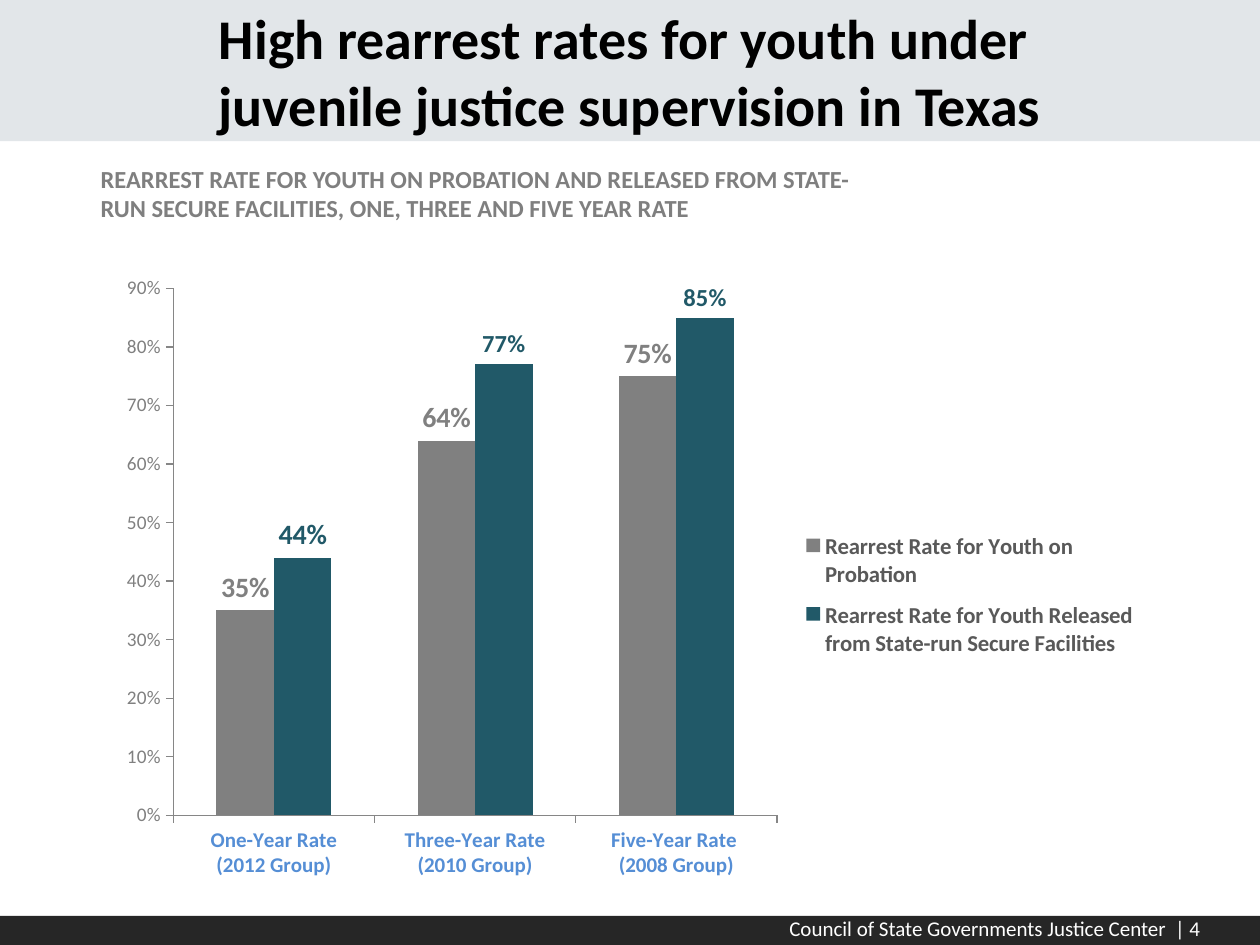
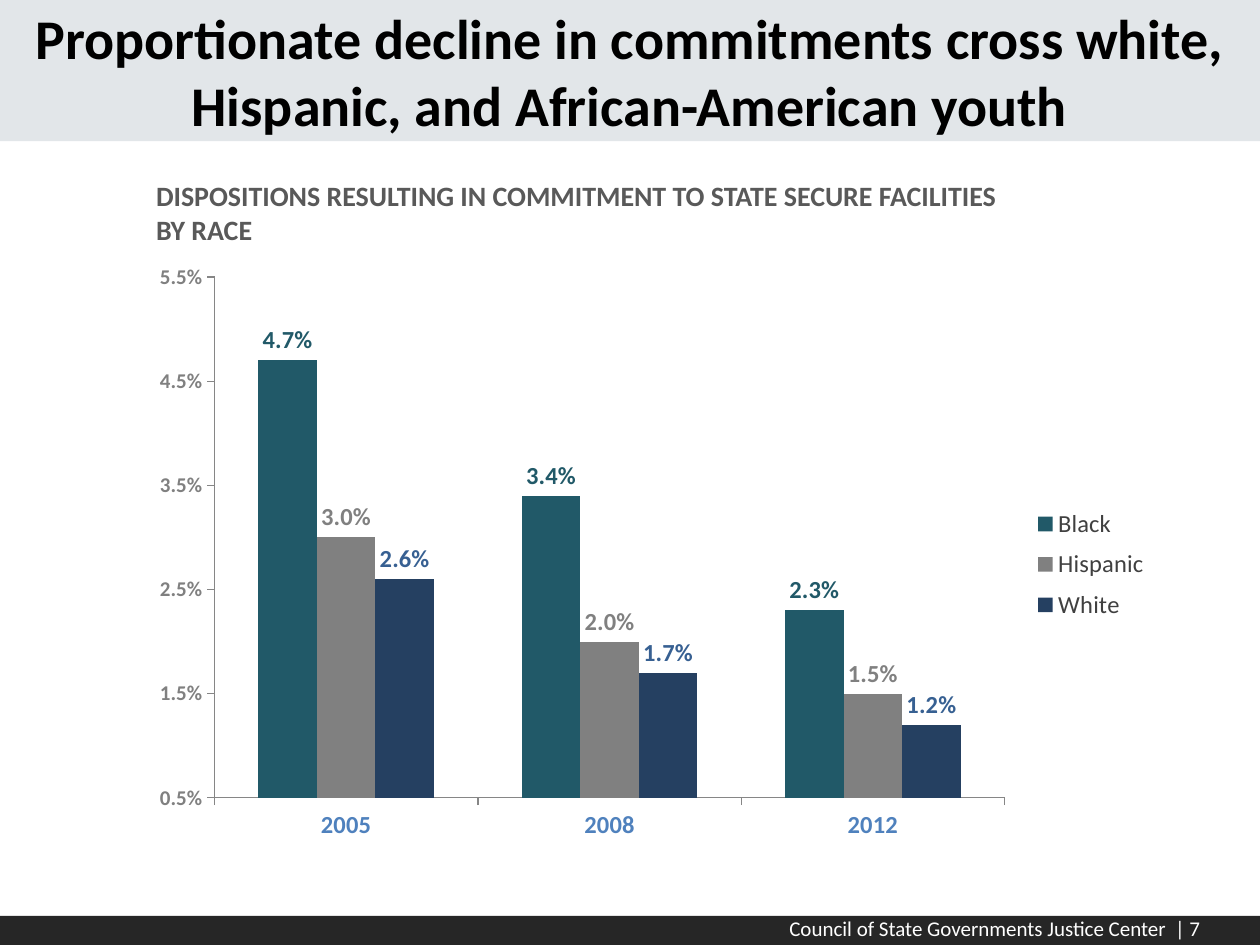
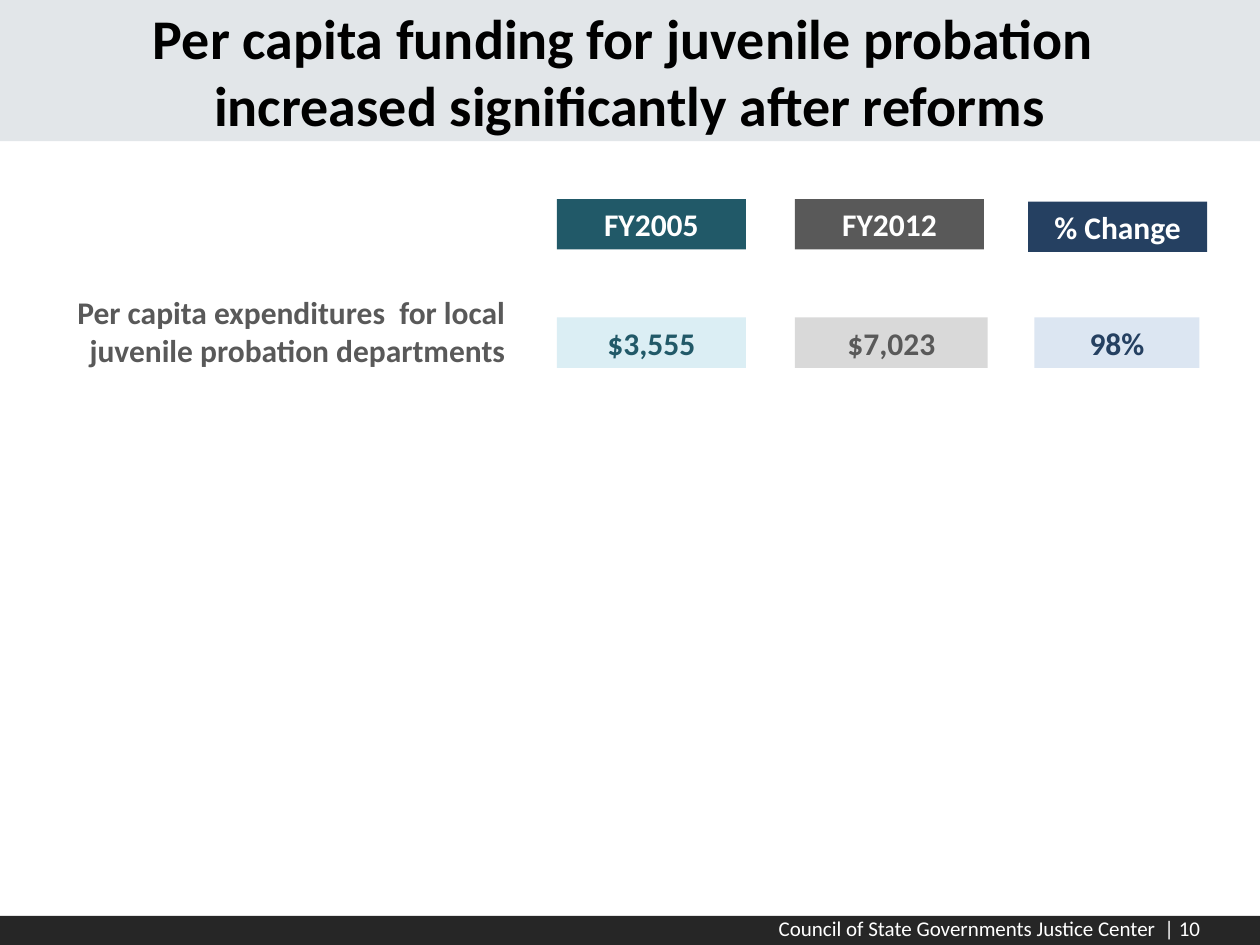
from lxml import etree
from pptx import Presentation
from pptx import util as u
from pptx.chart.data import CategoryChartData
from pptx.dml.color import RGBColor
from pptx.enum import chart as charts, shapes, text
from pptx.oxml.ns import qn

WIDTH, HEIGHT = u.Inches(10), u.Inches(7.5)
COLUMN, ROW = WIDTH / 10, HEIGHT / 7.5
FONT = "Calibri"
COLORS = {
    "black": "000000", "white": "FFFFFF", "band": "E2E6E9", "footer": "262626",
    "teal": "215968", "gray": "808080", "navy": "254061",
    "dark gray": "595959", "caption": "7F7F7F", "legend": "404040",
    "pale teal": "DBEEF4", "pale gray": "D9D9D9", "pale navy": "DCE6F2",
    "bright blue": "558ED5", "steel blue": "4F81BD", "label blue": "376092",
    "axis": "868686",
}
ALIGN = text.PP_ALIGN


def color(name):
    return RGBColor.from_string(COLORS[name])


def grid(left, top, columns, rows):
    return [round(n) for n in (left * COLUMN, top * ROW, columns * COLUMN, rows * ROW)]


def style(font, size, ink, bold=False):
    font.name = FONT
    font.size = u.Pt(size)
    font.bold = bold
    font.color.rgb = color(ink)


def write(box, words, size=18, ink="white", bold=True, align=ALIGN.CENTER,
          anchor=text.MSO_ANCHOR.MIDDLE):
    """Fill a box with text, one paragraph per line."""
    frame = box.text_frame
    frame.word_wrap = True
    frame.auto_size = text.MSO_AUTO_SIZE.NONE
    frame.vertical_anchor = anchor
    frame.text = words
    for para in frame.paragraphs:
        para.alignment = align
        for span in para.runs:
            style(span.font, size, ink, bold)


def add_text(page, area, words, **format):
    write(page.shapes.add_textbox(*grid(*area)), words, **format)


def add_box(page, area, fill, words="", **format):
    box = page.shapes.add_shape(shapes.MSO_SHAPE.RECTANGLE, *grid(*area))
    box.shadow.inherit = False
    box.fill.solid()
    box.fill.fore_color.rgb = color(fill)
    box.line.fill.background()
    if words:
        write(box, words, **format)


def add_page(deck, title, number):
    """Add a page with its title band and footer."""
    page = deck.slides.add_slide(deck.slide_layouts[5])
    band = page.shapes.title
    band.left, band.top, band.width, band.height = grid(0, 0, 10, 1.12)
    band.fill.solid()
    band.fill.fore_color.rgb = color("band")
    write(band, title, size=32, ink="black")
    add_box(page, (0, 7.27, 10, 0.23), "footer")
    add_text(page, (5.3, 7.24, 4.33, 0.26),
             f"Council of State Governments Justice Center  | {number}",
             size=12, bold=False, align=ALIGN.RIGHT)
    return page


def add_caption(page, area, words, size, ink):
    add_text(page, area, words, size=size, ink=ink, align=ALIGN.LEFT,
             anchor=text.MSO_ANCHOR.TOP)


def set_layout(part, index, shares, inner=False):
    """Place a chart part by its x, y, width and height shares of the chart."""
    for old in part.findall(qn("c:layout")):
        part.remove(old)
    layout = etree.Element(qn("c:layout"))
    manual = etree.SubElement(layout, qn("c:manualLayout"))
    settings = [("layoutTarget", "inner")] if inner else []
    settings += [("xMode", "edge"), ("yMode", "edge"), *zip("xywh", shares)]
    for tag, value in settings:
        etree.SubElement(manual, qn(f"c:{tag}")).set("val", str(value))
    part.insert(index, layout)


def style_axis(axis, size, ink, bold):
    axis.has_major_gridlines = False
    axis.major_tick_mark = charts.XL_TICK_MARK.OUTSIDE
    axis.minor_tick_mark = charts.XL_TICK_MARK.NONE
    axis.format.line.color.rgb = color("axis")
    style(axis.tick_labels.font, size, ink, bold)


def add_columns(page, area, categories, series, number_format, scale,
                category_font, value_font, legend_font, plot_area, legend_area):
    """Add a column chart; series holds (name, values, fill, label size, label ink)."""
    data = CategoryChartData(number_format=number_format)
    data.categories = categories
    for name, values, *_ in series:
        data.add_series(name, values)
    chart = page.shapes.add_chart(charts.XL_CHART_TYPE.COLUMN_CLUSTERED,
                                  *grid(*area), data).chart
    chart.has_title = False
    style(chart.font, 12, "black")

    axis = chart.value_axis
    axis.minimum_scale, axis.maximum_scale, axis.major_unit = scale
    axis.tick_labels.number_format = number_format
    axis.tick_labels.number_format_is_linked = False
    style_axis(axis, *value_font)
    style_axis(chart.category_axis, *category_font)

    plot = chart.plots[0]
    plot.gap_width, plot.overlap = 150, 0
    plot.vary_by_categories = False
    for bars, (_, _, fill, size, ink) in zip(plot.series, series):
        bars.format.fill.solid()
        bars.format.fill.fore_color.rgb = color(fill)
        labels = bars.data_labels
        labels.show_value = True
        labels.number_format = number_format
        labels.number_format_is_linked = False
        labels.position = charts.XL_LABEL_POSITION.OUTSIDE_END
        style(labels.font, size, ink, True)

    chart.has_legend = True
    chart.legend.position = charts.XL_LEGEND_POSITION.RIGHT
    chart.legend.include_in_layout = False
    style(chart.legend.font, *legend_font)
    set_layout(chart.element.xpath("//c:plotArea")[0], 0, plot_area, inner=True)
    set_layout(chart.element.xpath("//c:legend")[0], 1, legend_area)
    return chart


def add_rearrest_page(deck):
    page = add_page(deck, "High rearrest rates for youth under \n"
                    "juvenile justice supervision in Texas", 4)
    chart = add_columns(
        page, (0.88, 2.09, 8.26, 4.98),
        ["One-Year Rate\n(2012 Group)", "Three-Year Rate\n(2010 Group)",
         "Five-Year Rate \n(2008 Group)"],
        [("Rearrest Rate for Youth on Probation",
          (0.35, 0.64, 0.75), "gray", 16, "gray"),
         ("Rearrest Rate for Youth Released from State-run Secure Facilities",
          (0.44, 0.77, 0.85), "teal", 14, "teal")],
        number_format="0%", scale=(0, 0.9, 0.1),
        category_font=(12, "bright blue", True), value_font=(11, "gray", False),
        legend_font=(13, "dark gray", True),
        plot_area=(0.06, 0.04, 0.58, 0.84), legend_area=(0.66, 0.41, 0.33, 0.24))
    first_label = chart.plots[0].series[1].points[0].data_label
    style(first_label.font, 16, "teal", True)
    first_label.position = charts.XL_LABEL_POSITION.OUTSIDE_END
    add_caption(page, (0.7, 1.25, 6.19, 0.57),
                "REARREST RATE FOR YOUTH ON PROBATION AND RELEASED FROM STATE-RUN "
                "SECURE FACILITIES, ONE, THREE AND FIVE YEAR RATE", 14, "caption")


def add_commitments_page(deck):
    page = add_page(deck, "Proportionate decline in commitments cross white, "
                    "Hispanic, and African-American youth", 7)
    add_caption(page, (1.14, 1.37, 7.1, 0.64),
                "DISPOSITIONS RESULTING IN COMMITMENT TO STATE SECURE FACILITIES  "
                "BY RACE", 16, "dark gray")
    add_columns(
        page, (1.14, 2.01, 8.04, 4.75), ["2005", "2008", "2012"],
        [("Black", (0.047, 0.034, 0.023), "teal", 14, "teal"),
         ("Hispanic", (0.03, 0.02, 0.015), "gray", 14, "gray"),
         ("White", (0.026, 0.017, 0.012), "navy", 14, "label blue")],
        number_format="0.0%", scale=(0.005, 0.055, 0.01),
        category_font=(14, "steel blue", True), value_font=(12, "gray", True),
        legend_font=(14, "legend", False),
        plot_area=(0.07, 0.04, 0.78, 0.87), legend_area=(0.87, 0.41, 0.13, 0.22))


def add_funding_page(deck):
    page = add_page(deck, "Per capita funding for juvenile probation \n"
                    "increased significantly after reforms", 10)
    header_boxes = [
        ("FY2005", 4.42, 1.58, 1.5, "teal"),
        ("FY2012", 6.31, 1.58, 1.5, "dark gray"),
        ("% Change", 8.16, 1.6, 1.42, "navy"),
    ]
    amount_boxes = [
        ("$3,555", 4.42, 1.5, "pale teal", "teal"),
        ("$7,023", 6.31, 1.53, "pale gray", "dark gray"),
        ("98%", 8.21, 1.31, "pale navy", "navy"),
    ]
    for words, left, top, columns, fill in header_boxes:
        add_box(page, (left, top, columns, 0.4), fill, words)
    add_text(page, (0.2, 2.27, 3.91, 0.71),
             "Per capita expenditures  for local juvenile probation departments",
             ink="dark gray", align=ALIGN.RIGHT)
    for words, left, columns, fill, ink in amount_boxes:
        add_box(page, (left, 2.52, columns, 0.4), fill, words, ink=ink)


def main():
    deck = Presentation()
    deck.slide_width, deck.slide_height = WIDTH, HEIGHT
    add_rearrest_page(deck)
    add_commitments_page(deck)
    add_funding_page(deck)
    deck.save("out.pptx")


if __name__ == "__main__":
    main()
